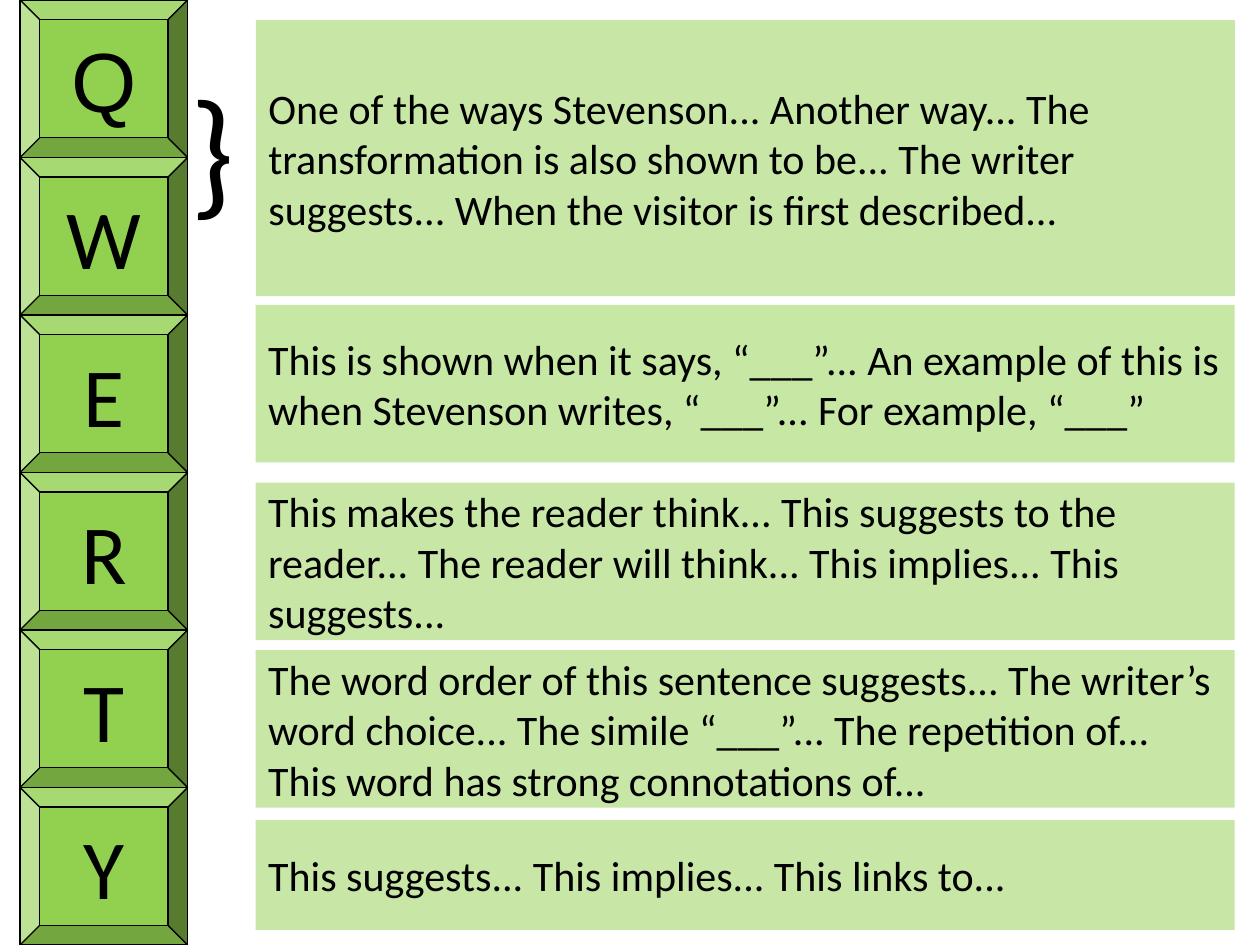
"""Build the QWERTY paragraph slide with sentence starters for each letter."""
import pptx
import pptx.dml.color
import pptx.enum.shapes
import pptx.enum.text
import pptx.oxml
import pptx.oxml.ns
import pptx.util

GREEN = pptx.dml.color.RGBColor(0x92, 0xD0, 0x50)
BLACK = pptx.dml.color.RGBColor(0, 0, 0)
Inches = pptx.util.Inches
Shapes = pptx.enum.shapes.MSO_SHAPE
Align = pptx.enum.text.PP_ALIGN

WIDTH, HEIGHT = 10, 7.5
LETTERS = "QWERTY"
KEY_LEFT, KEY_WIDTH = 0.16, 1.33
KEY_HEIGHT = HEIGHT / len(LETTERS)
PANEL_LEFT, PANEL_WIDTH = 2.03, 7.77
TITLE = (0.16, 2.19, 50, "One of the ways Stevenson... Another way... The transformation is also shown to be... The writer suggests... When the visitor is first described...")
PANELS = [
    (2.42, 1.25, 51, "This is shown when it says, “___”... An example of this is when Stevenson writes, “___”... For example, “___”"),
    (3.83, 1.25, 50, "This makes the reader think... This suggests to the reader... The reader will think... This implies... This suggests..."),
    (5.16, 1.25, 50, "The word order of this sentence suggests... The writer’s word choice... The simile “___”... The repetition of... This word has strong connotations of..."),
    (6.51, 0.87, 50, "This suggests... This implies... This links to..."),
]
FRAME_FORMAT = {
    "word_wrap": True,
    "auto_size": pptx.enum.text.MSO_AUTO_SIZE.NONE,
    "vertical_anchor": pptx.enum.text.MSO_ANCHOR.MIDDLE,
}


def write(shape, text, size, align=Align.LEFT, font_name="Calibri"):
    frame = shape.text_frame
    frame.text = text
    for name, value in FRAME_FORMAT.items():
        setattr(frame, name, value)
    paragraph = frame.paragraphs[0]
    paragraph.alignment = align
    font = paragraph.runs[0].font
    for name, value in {"name": font_name, "size": pptx.util.Pt(size)}.items():
        setattr(font, name, value)
    font.color.rgb = BLACK


def paint(shape, opacity=100):
    shape.fill.solid()
    shape.fill.fore_color.rgb = GREEN
    if opacity < 100:
        color = shape.fill._xPr.find(".//" + pptx.oxml.ns.qn("a:srgbClr"))
        alpha = pptx.oxml.parse_xml(f'<a:alpha {pptx.oxml.ns.nsdecls("a")} val="{opacity * 1000}"/>')
        color.append(alpha)


def add_key(slide, row, letter):
    box = (KEY_LEFT, row * KEY_HEIGHT, KEY_WIDTH, KEY_HEIGHT)
    key = slide.shapes.add_shape(Shapes.BEVEL, *map(Inches, box))
    key.shadow.inherit = False
    paint(key)
    key.line.color.rgb = BLACK
    key.line.width = pptx.util.Pt(0.75)
    write(key, letter, 48, Align.CENTER, "Arial" if letter == "Q" else "Calibri")


def format_panel(shape, opacity, text):
    paint(shape, opacity)
    shape.line.fill.background()
    write(shape, text, 24)


def main():
    presentation = pptx.Presentation()
    presentation.slide_width, presentation.slide_height = Inches(WIDTH), Inches(HEIGHT)
    slide = presentation.slides.add_slide(presentation.slide_layouts.get_by_name("Title Only"))

    top, height, opacity, text = TITLE
    title = slide.shapes.title
    position = {"left": PANEL_LEFT, "top": top, "width": PANEL_WIDTH, "height": height}
    for name, value in position.items():
        setattr(title, name, Inches(value))
    format_panel(title, opacity, text)

    for row, letter in enumerate(LETTERS):
        add_key(slide, row, letter)

    brace = slide.shapes.add_textbox(*map(Inches, (1.41, 0.43, 0.55, 1.45)))
    write(brace, "}", 80)
    brace.text_frame.word_wrap = False

    for top, height, opacity, text in PANELS:
        box = (PANEL_LEFT, top, PANEL_WIDTH, height)
        panel = slide.shapes.add_shape(Shapes.RECTANGLE, *map(Inches, box))
        panel.shadow.inherit = False
        format_panel(panel, opacity, text)

    presentation.save("out.pptx")


if __name__ == "__main__":
    main()
